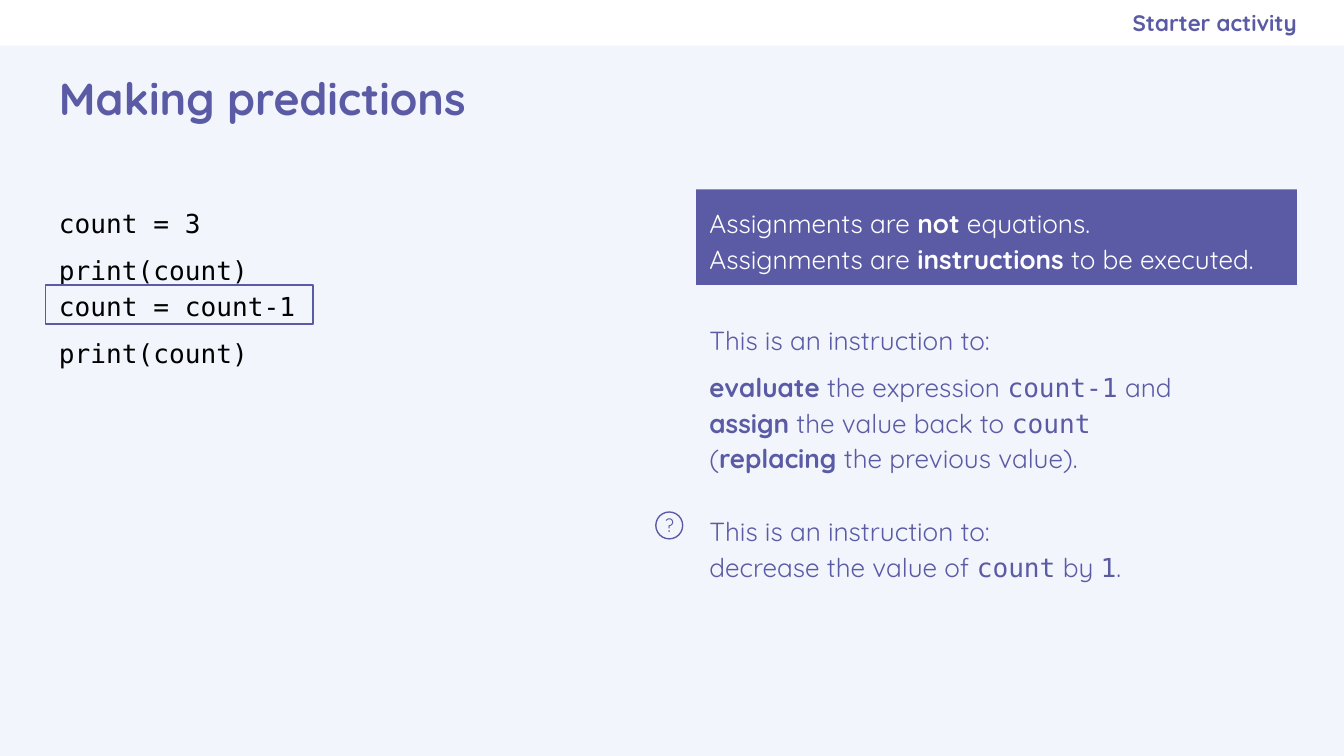
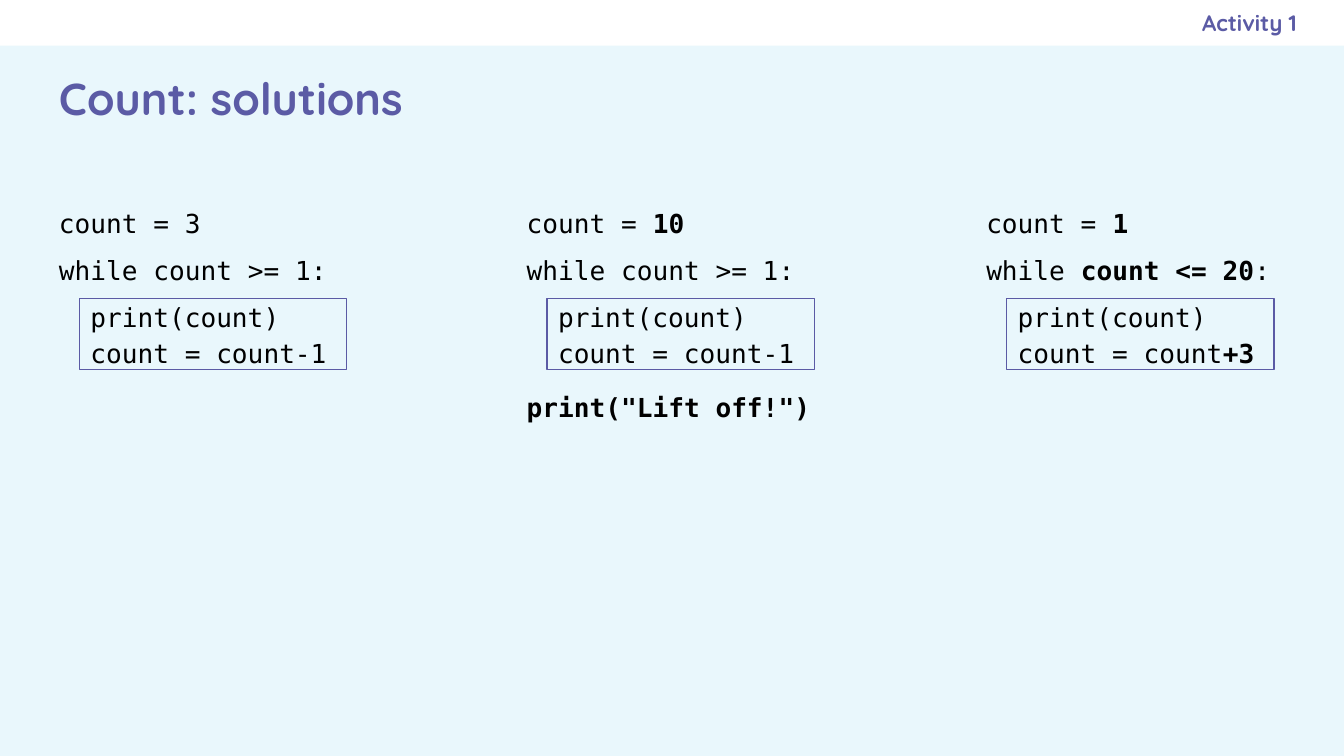
from typing import NamedTuple, Optional

from pptx import Presentation
from pptx.dml.color import RGBColor
from pptx.enum.shapes import MSO_SHAPE as Shape
from pptx.enum.text import MSO_ANCHOR as Anchor, PP_ALIGN as Align
from pptx.util import Emu, Inches, Pt

COLORS = {
    "violet": "5B5BA5",
    "white": "FFFFFF",
    "black": "000000",
    "starter": "F2F6FC",
    "activity": "E9F7FC",
}
BODY_FONT, CODE_FONT = "Quicksand", "DejaVu Sans Mono"

# The slide is a grid of square cells, 100 columns by 56.25 rows.
COLS, ROWS = 100, 56.25
CELL = Inches(0.1)
MARGIN = 3.4
BAND_ROWS = 3.4
BODY_TOP = 14.1
RIGHT_COL, RIGHT_WIDTH = 51.8, 44.7
FRAME_WIDTH = 19.9
CODE_INDENT = 2.34


class Box(NamedTuple):
    col: float
    row: float
    cols: float
    rows: float


class Run(NamedTuple):
    text: str
    bold: bool = False
    code: bool = False


class Para(NamedTuple):
    runs: list[Run]
    before: float = 0
    indent: float = 0
    spacing: float = 1.14


class Style(NamedTuple):
    size: float = 14
    color: str = "violet"
    align: Align = Align.LEFT
    anchor: Anchor = Anchor.TOP
    insets: tuple[float, float, float, float] = (1, 1, 1, 1)


class Program(NamedTuple):
    col: float
    rows: float
    paras: list[Para]


BODY = Style(insets=(1, 1, 0.6, 1))
BANNER = BODY._replace(color="white")
CODE = Style(color="black")
TITLE = Style(size=24, anchor=Anchor.MIDDLE)
TAG = Style(12, align=Align.RIGHT, anchor=Anchor.MIDDLE, insets=(1, 1, 0, 1))
BADGE = Style(10, align=Align.CENTER, anchor=Anchor.MIDDLE, insets=(0, 0, 0, 0))


def cells(n: float) -> Emu:
    return Emu(round(n * CELL))


def rgb(name: str) -> RGBColor:
    return RGBColor.from_string(COLORS[name])


def code(text: str, bold: bool = False) -> Run:
    return Run(text, bold, code=True)


def write(sp, paras: list[Para], style: Style) -> None:
    tf = sp.text_frame
    tf.word_wrap = True
    tf.vertical_anchor = style.anchor
    tf.margin_left, tf.margin_top, tf.margin_right, tf.margin_bottom = map(cells, style.insets)
    for i, para in enumerate(paras):
        p = tf.add_paragraph() if i else tf.paragraphs[0]
        p.alignment = style.align
        p.line_spacing = para.spacing
        p.space_before = Pt(para.before)
        if para.indent:
            p._p.get_or_add_pPr().set("marL", str(cells(para.indent)))
        for run in para.runs:
            r = p.add_run()
            r.text = run.text
            r.font.name = CODE_FONT if run.code else BODY_FONT
            r.font.size = Pt(style.size)
            r.font.bold = run.bold
            r.font.color.rgb = rgb(style.color)


def add_text(s, box: Box, paras: list[Para], style: Style) -> None:
    write(s.shapes.add_textbox(*map(cells, box)), paras, style)


def add_shape(s, box: Box, fill: Optional[str] = None, kind: Shape = Shape.RECTANGLE):
    """Draw a filled shape without outline, or a violet outline without fill."""
    sp = s.shapes.add_shape(kind, *map(cells, box))
    sp.shadow.inherit = False
    if fill:
        sp.fill.solid()
        sp.fill.fore_color.rgb = rgb(fill)
        sp.line.fill.background()
    else:
        sp.fill.background()
        sp.line.color.rgb = rgb("violet")
        sp.line.width = Pt(0.75)
    return sp


def new_slide(prs, title: str, tag: str, background: str):
    s = prs.slides.add_slide(prs.slide_layouts[6])
    s.background.fill.solid()
    s.background.fill.fore_color.rgb = rgb(background)
    add_shape(s, Box(0, 0, COLS, BAND_ROWS), "white")
    add_text(s, Box(57.5, 0, 39, BAND_ROWS), [Para([Run(tag, True)], spacing=1.0)], TAG)
    add_text(s, Box(MARGIN, BAND_ROWS, COLS - 2 * MARGIN, 7.7),
             [Para([Run(title, True)], spacing=1.0)], TITLE)
    return s


def predictions_slide(prs) -> None:
    s = new_slide(prs, "Making predictions", "Starter activity", "starter")
    add_text(s, Box(MARGIN, BODY_TOP, 29.1, 26.2), [
        Para([code("count = 3")]),
        Para([code("print(count)")], before=6),
        Para([code("count = count-1")]),
        Para([code("print(count)")], before=6),
    ], CODE)
    add_shape(s, Box(MARGIN, 21.2, FRAME_WIDTH, 2.9))

    banner = add_shape(s, Box(RIGHT_COL, BODY_TOP, RIGHT_WIDTH, 7.1), "violet")
    write(banner, [
        Para([Run("Assignments are "), Run("not", True), Run(" equations.")]),
        Para([Run("Assignments are "), Run("instructions", True), Run(" to be executed.")]),
    ], BANNER)

    lead = Para([Run("This is an instruction to:")])
    add_text(s, Box(RIGHT_COL, 22.8, RIGHT_WIDTH, 12.7), [
        lead,
        Para([Run("evaluate", True), Run(" the expression "), code("count-1"), Run(" and")],
             before=6),
        Para([Run("assign", True), Run(" the value back to "), code("count")]),
        Para([Run("("), Run("replacing", True), Run(" the previous value).")]),
    ], BODY)

    badge = add_shape(s, Box(48.8, 38.1, 2, 2), kind=Shape.OVAL)
    write(badge, [Para([Run("?")], spacing=1.0)], BADGE)
    add_text(s, Box(RIGHT_COL, 37, RIGHT_WIDTH, 6.8), [
        lead,
        Para([Run("decrease the value of "), code("count"), Run(" by "), code("1"), Run(".")]),
    ], BODY)


def loop(start: Run, condition: list[Run], update: list[Run]) -> list[Para]:
    """Lines of a counting program with a while loop."""
    return [
        Para([code("count = "), start]),
        Para([code("while "), *condition], before=6),
        Para([code("print(count)")], before=6, indent=CODE_INDENT),
        Para([code("count = count"), *update], indent=CODE_INDENT),
    ]


def solutions_slide(prs) -> None:
    s = new_slide(prs, "Count: solutions", "Activity 1", "activity")
    down, minus_one = [code("count >= 1:")], [code("-1")]
    up = [code("count <= 20", True), code(":")]
    lift_off = Para([code('print("Lift off!")', True)], before=10)
    programs = [
        Program(MARGIN, 14, loop(code("3"), down, minus_one)),
        Program(38.2, 19, loop(code("10", True), down, minus_one) + [lift_off]),
        Program(72.4, 19, loop(code("1", True), up, [code("+3", True)])),
    ]
    for program in programs:
        add_text(s, Box(program.col, BODY_TOP, 23.6, program.rows), program.paras, CODE)
        add_shape(s, Box(program.col + 2.5, 22.2, FRAME_WIDTH, 5.3))


def main() -> None:
    prs = Presentation()
    prs.slide_width, prs.slide_height = cells(COLS), cells(ROWS)
    predictions_slide(prs)
    solutions_slide(prs)
    prs.save("out.pptx")


if __name__ == "__main__":
    main()
